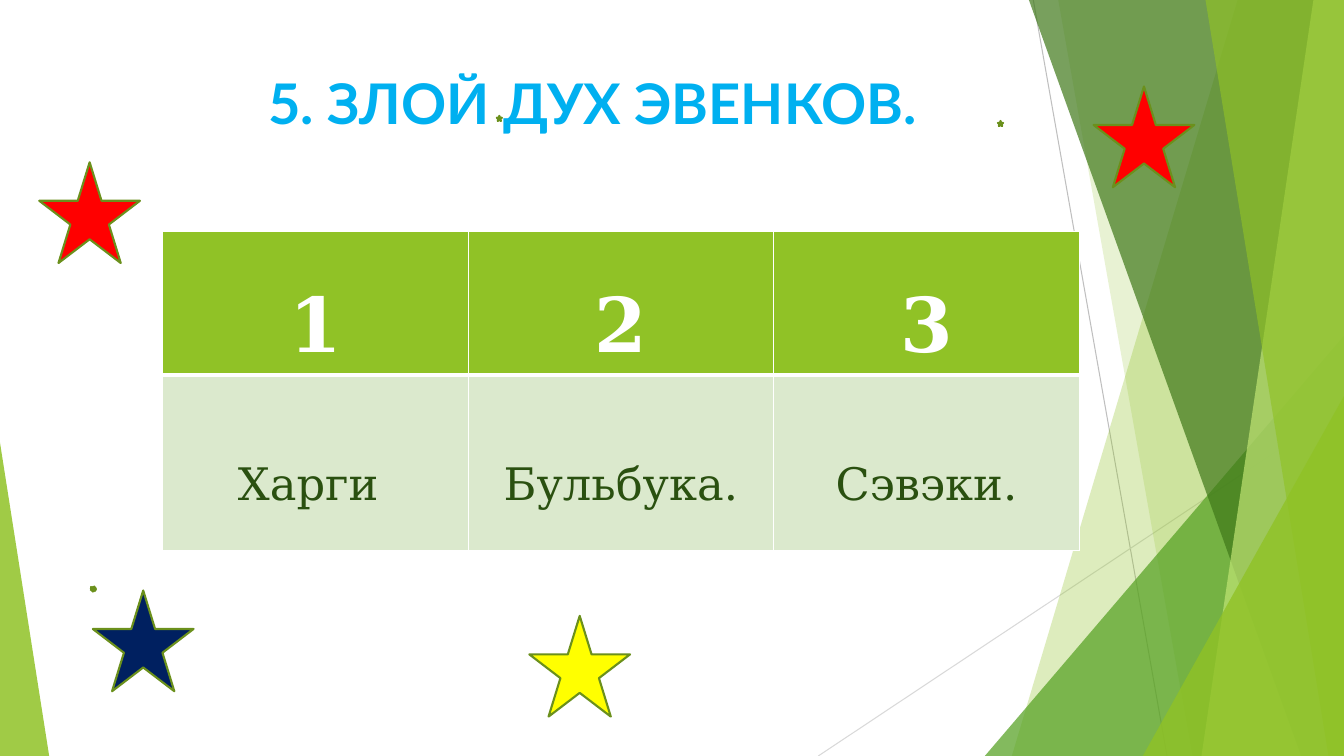
from lxml import etree
from pptx import Presentation
from pptx.dml.color import RGBColor
from pptx.enum.shapes import MSO_CONNECTOR, MSO_SHAPE
from pptx.enum.text import MSO_AUTO_SIZE, PP_ALIGN
from pptx.oxml.ns import qn
from pptx.util import Cm, Pt

STRAIGHT = MSO_CONNECTOR.STRAIGHT
TRIANGLE = MSO_SHAPE.ISOSCELES_TRIANGLE
STAR = MSO_SHAPE.STAR_5_POINT
BURST = MSO_SHAPE.EXPLOSION1
CENTER = PP_ALIGN.CENTER
WIDTH, HEIGHT = 33.87, 19.05
GREEN = "90C226"


def color(value):
    return RGBColor.from_string(value)


def paint(shape, fill, opacity=100):
    shape.shadow.inherit = False
    shape.fill.solid()
    shape.fill.fore_color.rgb = color(fill)
    shape.line.fill.background()
    if opacity < 100:
        tint = shape.fill._xPr.find(qn("a:solidFill"))[0]
        etree.SubElement(tint, qn("a:alpha"), val=str(opacity * 1000))


presentation = Presentation()
presentation.slide_width, presentation.slide_height = Cm(WIDTH), Cm(HEIGHT)
slide = presentation.slides.add_slide(presentation.slide_layouts[6])
shapes = slide.shapes

# Thin background lines
for ends, line_color in [
    ((26.04, 0, 29.41, HEIGHT), "BFBFBF"),
    ((WIDTH, 10.24, 20.62, HEIGHT), "D9D9D9"),
]:
    connector = shapes.add_connector(STRAIGHT, *map(Cm, ends))
    connector.line.color.rgb = color(line_color)
    connector.line.width = Pt(0.75)
    etree.SubElement(connector._element.spPr, qn("a:effectLst"))

# Background facets: bands by top and bottom left corner, triangles by box and apex
facets = [
    ("band", (31.19, 25.5), GREEN, 30),
    ("band", (26.67, 30.05), GREEN, 20),
    ("triangle", (24.82, 8.46, 9.05, 10.59, 1), "54A021", 72),
    ("band", (25.93, 32.79), "3F7819", 70),
    ("band", (33.1, 30.28), "C0E474", 70),
    ("band", (30.38, 33.48), GREEN, 65),
    ("triangle", (28.8, 9.98, 5.07, 9.07, 1), GREEN, 80),
    ("triangle", (0, 11.15, 1.24, 7.9, 0), GREEN, 85),
]
for kind, geometry, fill, opacity in facets:
    if kind == "band":
        top_left, bottom_left = geometry
        builder = shapes.build_freeform(Cm(top_left), Cm(0))
        corners = [(WIDTH, 0), (WIDTH, HEIGHT), (bottom_left, HEIGHT)]
        builder.add_line_segments([(Cm(x), Cm(y)) for x, y in corners])
        facet = builder.convert_to_shape()
    else:
        *box, apex = geometry
        facet = shapes.add_shape(TRIANGLE, *map(Cm, box))
        facet.adjustments[0] = apex
    paint(facet, fill, opacity)

# Stars and small specks
for kind, left, top, size, fill in [
    (BURST, 2.29, 14.78, 0.13, GREEN),
    (STAR, 12.52, 2.92, 0.13, GREEN),
    (STAR, 25.15, 3.05, 0.13, GREEN),
    (STAR, 13.34, 15.52, 2.54, "FFFF00"),
    (STAR, 2.34, 14.88, 2.54, "002060"),
    (STAR, 0.99, 4.09, 2.54, "FF0000"),
    (STAR, 27.56, 2.18, 2.54, "FF0000"),
]:
    star = shapes.add_shape(kind, Cm(left), Cm(top), Cm(size), Cm(size))
    paint(star, fill)
    star.line.color.rgb = color("6B901C")
    star.line.width = Pt(1.5)

# Answer table
rows = [
    {"texts": ["1", "2", "3"], "height": 3.6, "fill": GREEN, "color": "FFFFFF",
     "spacing": 1.5, "borders": {"L": 1, "R": 1, "T": 1, "B": 3},
     "font": {"name": "DejaVu Serif", "size": Pt(54), "bold": True}},
    {"texts": ["Харги ", "Бульбука.", "Сэвэки."], "height": 4.42,
     "fill": "DBE9CD", "color": "2A5010",
     "spacing": 2.5, "borders": {"L": 1, "R": 1, "T": 3, "B": 1},
     "font": {"name": "DejaVu Serif", "size": Pt(32), "bold": False}},
]
table = shapes.add_table(2, 3, Cm(4.1), Cm(5.84), Cm(23.1), Cm(8.02)).table
table.horz_banding = False
for row_index, row in enumerate(rows):
    table.rows[row_index].height = Cm(row["height"])
    for column_index, text in enumerate(row["texts"]):
        cell = table.cell(row_index, column_index)
        cell.fill.solid()
        cell.fill.fore_color.rgb = color(row["fill"])
        paragraph = cell.text_frame.paragraphs[0]
        paragraph.text = text
        paragraph.alignment = CENTER
        paragraph.line_spacing = row["spacing"]
        font = paragraph.runs[0].font
        for name, value in row["font"].items():
            setattr(font, name, value)
        font.color.rgb = color(row["color"])
        properties = cell._tc.get_or_add_tcPr()
        for position, (side, points) in enumerate(row["borders"].items()):
            border = etree.Element(qn("a:ln" + side), w=str(Pt(points)))
            border_fill = etree.SubElement(border, qn("a:solidFill"))
            etree.SubElement(border_fill, qn("a:srgbClr"), val="FFFFFF")
            properties.insert(position, border)

# Question
title = shapes.add_textbox(Cm(1.85), Cm(1.6), Cm(26.16), Cm(1.96))
title.text_frame.word_wrap = True
title.text_frame.auto_size = MSO_AUTO_SIZE.SHAPE_TO_FIT_TEXT
paragraph = title.text_frame.paragraphs[0]
paragraph.text = "5. ЗЛОЙ ДУХ ЭВЕНКОВ."
paragraph.alignment = CENTER
font = paragraph.runs[0].font
for name, value in {"name": "Lato", "size": Pt(40), "bold": True}.items():
    setattr(font, name, value)
font.color.rgb = color("00B0F0")

presentation.save("out.pptx")
